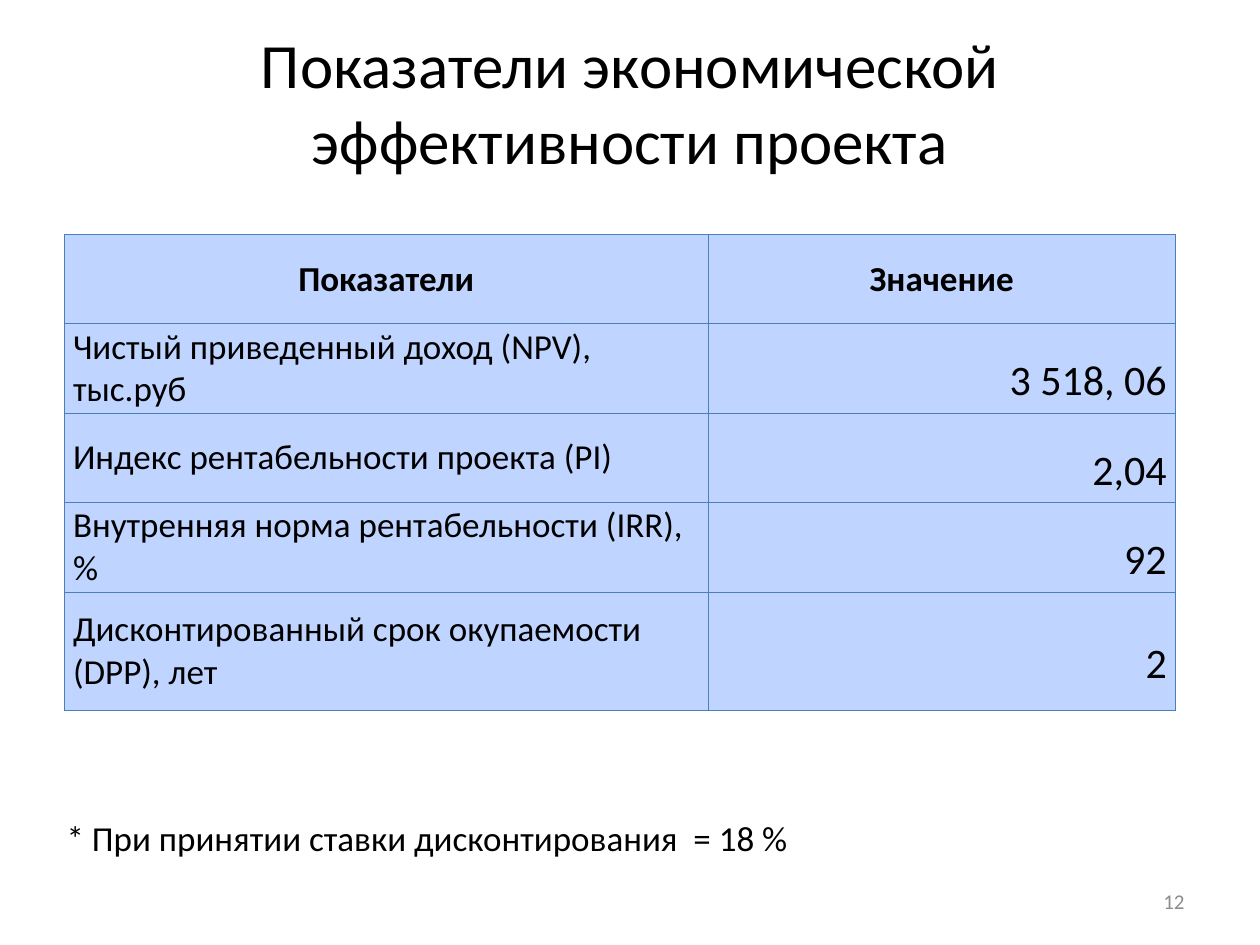
from dataclasses import dataclass

from lxml import etree
from pptx import Presentation
from pptx.dml.color import RGBColor
from pptx.enum import text
from pptx.oxml import ns
from pptx.util import Inches, Pt


@dataclass(frozen=True)
class Theme:
    font: str = "Calibri"
    ink: str = "000000"
    gray: str = "8C8C8C"
    fill: str = "BFD4FF"
    line: str = "4B7EBC"
    title: int = 36
    body: int = 20
    value: int = 24
    small: int = 12


theme = Theme()
align = text.PP_ALIGN
middle = text.MSO_ANCHOR.MIDDLE


def write(frame, words, size=theme.body, color=theme.ink, bold=False,
          side=align.LEFT, anchor=text.MSO_ANCHOR.TOP, space=None):
    frame.word_wrap = True
    frame.vertical_anchor = anchor
    para = frame.paragraphs[0]
    para.alignment = side
    para.line_spacing = space
    run = para.add_run()
    run.text = words
    run.font.name = theme.font
    run.font.size = Pt(size)
    run.font.bold = bold
    run.font.color.rgb = RGBColor.from_string(color)
    return para


def border(cell):
    """Draw a thin line on all four sides of a cell."""
    props = cell._tc.get_or_add_tcPr()
    for side in ("lnL", "lnR", "lnT", "lnB"):
        line = etree.SubElement(props, ns.qn(f"a:{side}"), w=str(Pt(0.75)))
        fill = etree.SubElement(line, ns.qn("a:solidFill"))
        etree.SubElement(fill, ns.qn("a:srgbClr"), val=theme.line)


deck = Presentation()
deck.slide_width, deck.slide_height = Inches(10), Inches(7.5)
slide = deck.slides.add_slide(deck.slide_layouts[6])

# Title, footnote and page number
labels = [
    ((0.5, 0.38, 9, 0.85), "Показатели экономической эффективности проекта",
     dict(size=theme.title, side=align.CENTER, anchor=middle)),
    ((0.43, 6.43, 8.43, 0.44), "* При принятии ставки дисконтирования  = 18 %", {}),
    ((7.17, 6.95, 2.33, 0.4), "12",
     dict(size=theme.small, color=theme.gray, side=align.RIGHT, anchor=middle)),
]
for place, words, style in labels:
    box = slide.shapes.add_textbox(*map(Inches, place))
    write(box.text_frame, words, **style)

# Table of indicators
rows = [
    ("Показатели", "Значение"),
    ("Чистый приведенный доход (NPV), тыс.руб", "3\u00a0518, 06"),
    ("Индекс рентабельности проекта (PI)", "2,04"),
    ("Внутренняя норма рентабельности (IRR), %", "92"),
    ("Дисконтированный срок окупаемости (DPP), лет", "2"),
]
widths = [5.11, 3.71]
heights = [0.71] * 4 + [0.94]
head = dict(bold=True, side=align.CENTER)
value = dict(size=theme.value, side=align.RIGHT, space=1.5)

table = slide.shapes.add_table(
    len(rows), len(widths), Inches(0.51), Inches(1.86),
    Inches(sum(widths)), Inches(sum(heights))).table
for col, width in zip(table.columns, widths):
    col.width = Inches(width)

for i, (row, height) in enumerate(zip(rows, heights)):
    table.rows[i].height = Inches(height)
    for j, words in enumerate(row):
        cell = table.cell(i, j)
        cell.margin_left = cell.margin_right = Inches(0.07)
        cell.margin_top = cell.margin_bottom = 0
        cell.vertical_anchor = middle
        border(cell)
        cell.fill.solid()
        cell.fill.fore_color.rgb = RGBColor.from_string(theme.fill)
        style = head if i == 0 else value if j else {}
        para = write(cell.text_frame, words, anchor=None, **style)
        if i and j:
            para._p.get_or_add_pPr().set("indent", str(Inches(0.49)))

deck.save("out.pptx")
